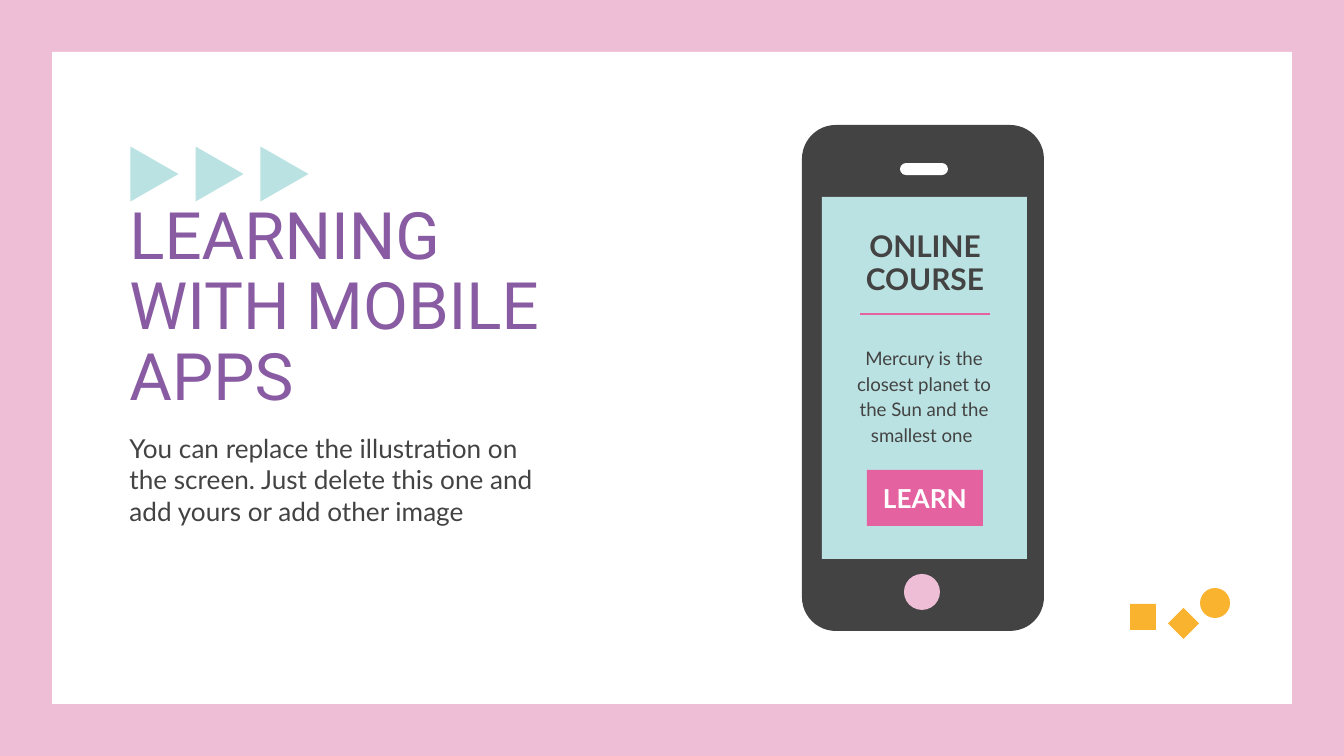
from pptx import Presentation, util as u
from pptx.dml.color import RGBColor
from pptx.enum import shapes, text
from pptx.oxml.ns import qn
from lxml import etree

EMU_PER_PX = 914400 / 134.4
PINK, ROSE, AQUA = "EEBDD6", "E562A0", "BBE2E2"
DARK, WHITE, PURPLE, ORANGE = "434343", "FFFFFF", "885BA2", "FAB32E"
KIND = shapes.MSO_SHAPE
ANCHOR = text.MSO_ANCHOR
CENTER = text.PP_ALIGN.CENTER


def px(*lengths):
    """Turn pixel lengths into EMU."""
    return [u.Emu(round(length * EMU_PER_PX)) for length in lengths]


def paint(color_format, color):
    """Set a fill's solid colour or a font's colour from a hex string."""
    if hasattr(color_format, "solid"):
        color_format.solid()
        color_format = color_format.fore_color
    color_format.rgb = RGBColor.from_string(color)


def add_block(slide, kind, box, color, rotation=0):
    """Add a flat preset shape without outline or shadow."""
    shape = slide.shapes.add_shape(kind, *px(*box))
    shape.shadow.inherit = False
    shape.line.fill.background()
    shape.rotation = rotation
    paint(shape.fill, color)
    return shape


def write(shape, content, size, color, font="Lato", bold=False,
          align=text.PP_ALIGN.LEFT, anchor=ANCHOR.TOP, spacing=1.0):
    """Put formatted text into a shape."""
    frame = shape.text_frame
    frame.text = content
    frame.word_wrap = True
    frame.auto_size = text.MSO_AUTO_SIZE.NONE
    frame.vertical_anchor = anchor
    frame.margin_left = frame.margin_right = u.Inches(0.1)
    frame.margin_top = frame.margin_bottom = u.Inches(0.1)
    for paragraph in frame.paragraphs:
        paragraph.alignment = align
        paragraph.line_spacing = spacing
        paragraph.space_before = u.Pt(0)
        for run in paragraph.runs:
            run.font.name = font
            run.font.size = u.Pt(size)
            run.font.bold = bold
            paint(run.font.color, color)


def place(shape, box):
    """Move and resize a placeholder."""
    shape.left, shape.top, shape.width, shape.height = px(*box)


def add_rule(slide, start, end, color, width):
    """Add a straight line without shadow."""
    line = slide.shapes.add_connector(
        shapes.MSO_CONNECTOR.STRAIGHT, *px(*start, *end))
    paint(line.line.fill, color)
    line.line.width = u.Pt(width)
    etree.SubElement(line._element.spPr, qn("a:effectLst"))


def add_heading(slide):
    """Fill the title and body placeholders and add the arrows above."""
    title, body = slide.placeholders
    place(title, (116, 245, 445, 183))
    write(title, "LEARNING WITH MOBILE APPS", 35, PURPLE, "Roboto",
          anchor=ANCHOR.BOTTOM, spacing=0.9)
    place(body, (116, 419, 445, 121))
    write(body, "You can replace the illustration on the screen. "
          "Just delete this one and add yours or add other image", 14, DARK)
    for index in range(3):
        add_block(slide, KIND.ISOSCELES_TRIANGLE,
                  (127 + 65 * index, 150, 55, 48), AQUA, 90)


def add_phone(slide):
    """Draw the phone and the course page on its screen."""
    case = add_block(slide, KIND.ROUNDED_RECTANGLE, (802, 125, 242, 506), DARK)
    case.adjustments[0] = 0.14
    speaker = add_block(slide, KIND.ROUNDED_RECTANGLE, (900, 163, 48, 12), WHITE)
    speaker.adjustments[0] = 0.5
    add_block(slide, KIND.RECTANGLE, (822, 197, 205, 362), AQUA)
    add_block(slide, KIND.OVAL, (904, 574, 36, 36), PINK)

    course = slide.shapes.add_textbox(*px(849, 213, 152, 97))
    write(course, "ONLINE\nCOURSE", 16, DARK, bold=True, align=CENTER,
          anchor=ANCHOR.BOTTOM, spacing=0.9)
    add_rule(slide, (860, 314), (990, 314), ROSE, 1.5)
    summary = slide.shapes.add_textbox(*px(840, 330, 168, 121))
    write(summary, "Mercury is the closest planet to the Sun and the smallest one ",
          10, DARK, align=CENTER, spacing=1.15)
    button = add_block(slide, KIND.RECTANGLE, (867, 470, 116, 56), ROSE)
    write(button, "LEARN", 14, WHITE, bold=True, align=CENTER,
          anchor=ANCHOR.MIDDLE)


def main():
    """Build and save the slide."""
    presentation = Presentation()
    presentation.slide_width, presentation.slide_height = px(1344, 756)
    slide = presentation.slides.add_slide(presentation.slide_layouts[2])
    paint(slide.background.fill, PINK)
    panel = add_block(slide, KIND.RECTANGLE, (52, 52, 1240, 652), WHITE)
    slide.shapes._spTree.insert(2, panel._element)
    add_heading(slide)
    add_phone(slide)
    for kind, box in ((KIND.DIAMOND, (1168, 608, 31, 31)),
                      (KIND.RECTANGLE, (1130, 604, 26, 26)),
                      (KIND.OVAL, (1200, 588, 30, 30))):
        add_block(slide, kind, box, ORANGE)
    presentation.save("out.pptx")


if __name__ == "__main__":
    main()
